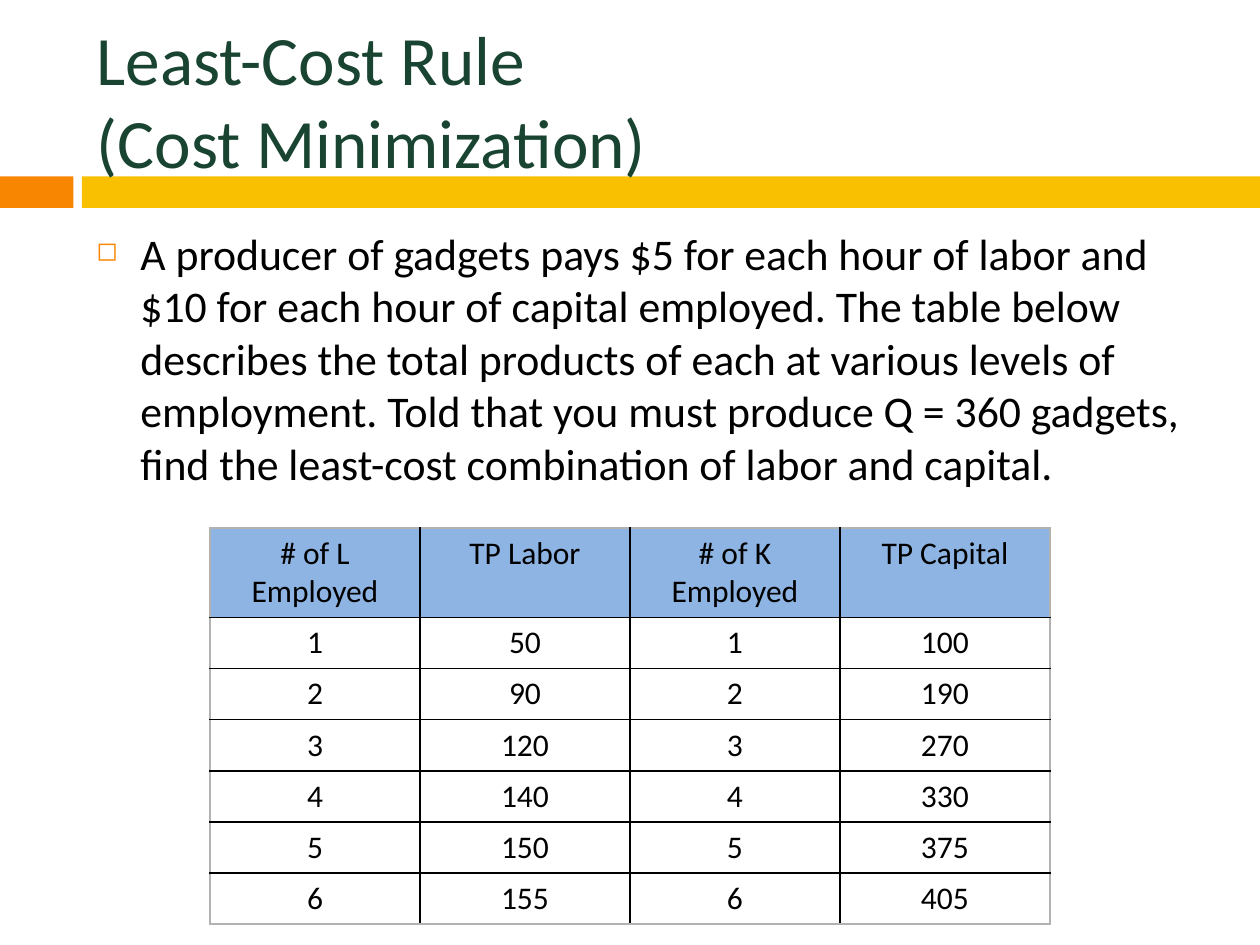
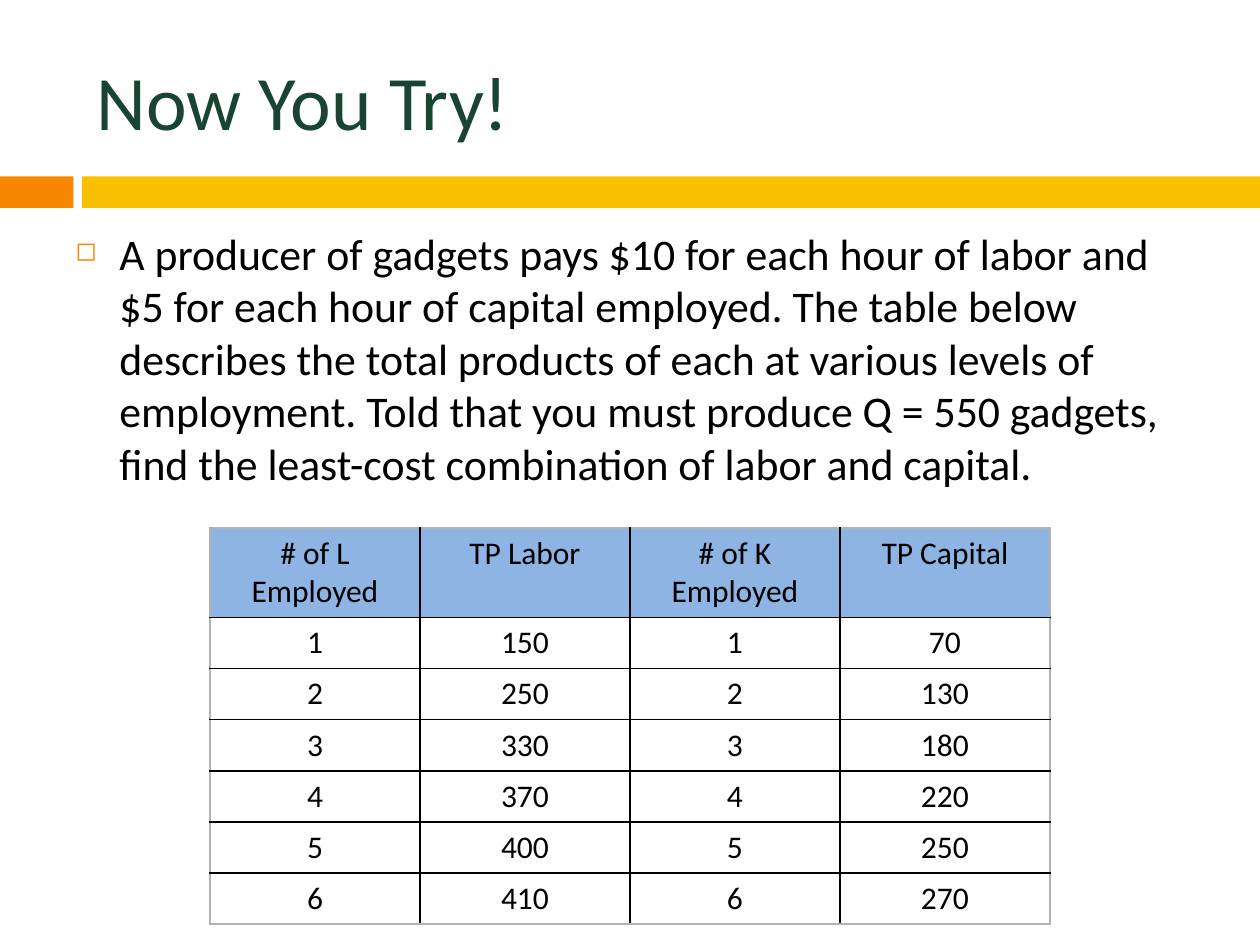
from dataclasses import dataclass
from itertools import product

from lxml import etree
from pptx import Presentation
from pptx.dml.color import RGBColor
from pptx.enum.shapes import MSO_SHAPE
from pptx.enum.text import MSO_ANCHOR, MSO_AUTO_SIZE, PP_ALIGN
from pptx.oxml.ns import qn
from pptx.slide import Slide
from pptx.util import Inches, Pt

RECT = MSO_SHAPE.RECTANGLE
MIDDLE, TOP = MSO_ANCHOR.MIDDLE, MSO_ANCHOR.TOP
NO_FIT = MSO_AUTO_SIZE.NONE
LEFT, CENTER = PP_ALIGN.LEFT, PP_ALIGN.CENTER

WIDTH, HEIGHT = Inches(10), Inches(7.5)
COL, ROW = WIDTH / 12, HEIGHT / 30
TITLE_ONLY = 5
FONT = "Calibri"
GREEN, ORANGE, YELLOW = "194431", "F88600", "F8C000"
BLUE, BLACK, GRAY = "8EB4E3", "000000", "B2B2B2"
HEADERS = ("# of L Employed", "TP Labor", "# of K Employed", "TP Capital")


@dataclass(frozen=True)
class Box:
    col: float
    row: float
    cols: float
    rows: float

    def emu(self) -> tuple[int, int, int, int]:
        return (round(self.col * COL), round(self.row * ROW),
                round(self.cols * COL), round(self.rows * ROW))


@dataclass(frozen=True)
class Band:
    box: Box
    color: str


@dataclass(frozen=True)
class Exercise:
    title: tuple[str, ...]
    title_size: float
    body_box: Box
    labor_cost: int
    capital_cost: int
    quantity: int
    tp_labor: tuple[int, ...]
    tp_capital: tuple[int, ...]

    def question(self) -> str:
        return (f"A producer of gadgets pays ${self.labor_cost} for each hour of labor "
                f"and ${self.capital_cost} for each hour of capital employed. "
                "The table below describes the total products of each at various levels "
                f"of employment. Told that you must produce Q = {self.quantity} gadgets, "
                "find the least-cost combination of labor and capital.")

    def rows(self) -> list[tuple]:
        pairs = zip(self.tp_labor, self.tp_capital)
        return [HEADERS] + [(n, tl, n, tk) for n, (tl, tk) in enumerate(pairs, 1)]


TITLE_BOX = Box(0.8, 1, 10.7, 4.32)
TABLE_BOX = Box(2, 16.76, 8, 12.52)
HEADER_ROWS = 2.84
BANDS = (Band(Box(0, 5.6, 0.7, 1), ORANGE), Band(Box(0.78, 5.6, 11.22, 1), YELLOW))

EXERCISES = (
    Exercise(("Least-Cost Rule", "(Cost Minimization)"), 39.6, Box(0.8, 7, 10.7, 19.68),
             5, 10, 360, (50, 90, 120, 140, 150, 155), (100, 190, 270, 330, 375, 405)),
    Exercise(("Now You Try!",), 44, Box(0.6, 7, 10.8, 19.8),
             10, 5, 550, (150, 250, 330, 370, 400, 410), (70, 130, 180, 220, 250, 270)),
)


def rgb(value: str) -> RGBColor:
    return RGBColor.from_string(value)


def set_attrs(target, values: dict) -> None:
    for name, value in values.items():
        setattr(target, name, value)


def place(shape, box: Box) -> None:
    set_attrs(shape, dict(zip(("left", "top", "width", "height"), box.emu())))


def write(p, lines: tuple[str, ...], size: float, color: str, align) -> None:
    p.alignment = align
    for i, line in enumerate(lines):
        if i:
            p.add_line_break()
        r = p.add_run()
        r.text = line
        set_attrs(r.font, {"name": FONT, "size": Pt(size), "bold": False})
        r.font.color.rgb = rgb(color)


def add_title(s: Slide, ex: Exercise) -> None:
    title = s.shapes.title
    place(title, TITLE_BOX)
    tf = title.text_frame
    set_attrs(tf, {"word_wrap": True, "auto_size": NO_FIT, "vertical_anchor": MIDDLE})
    write(tf.paragraphs[0], ex.title, ex.title_size, GREEN, LEFT)


def add_bands(s: Slide) -> None:
    for band in BANDS:
        sp = s.shapes.add_shape(RECT, *band.box.emu())
        sp.shadow.inherit = False
        sp.fill.solid()
        sp.fill.fore_color.rgb = rgb(band.color)
        sp.line.fill.background()
        s.shapes.title.element.addprevious(sp.element)


def add_bullet(p) -> None:
    pPr = p._p.get_or_add_pPr()
    indent = Inches(0.35)
    pPr.set("marL", str(indent))
    pPr.set("indent", str(-indent))
    color = etree.SubElement(pPr, qn("a:buClr"))
    etree.SubElement(color, qn("a:srgbClr"), val=ORANGE)
    etree.SubElement(pPr, qn("a:buSzPct"), val="60000")
    etree.SubElement(pPr, qn("a:buChar"), char="◻")


def add_question(s: Slide, ex: Exercise) -> None:
    tf = s.shapes.add_textbox(*ex.body_box.emu()).text_frame
    set_attrs(tf, {"word_wrap": True, "auto_size": NO_FIT, "vertical_anchor": TOP})
    p = tf.paragraphs[0]
    write(p, (ex.question(),), 25, BLACK, LEFT)
    p.space_before = Pt(7)
    add_bullet(p)


def add_borders(cell, outer: dict[str, bool]) -> None:
    tcPr = cell._tc.get_or_add_tcPr()
    for side, is_outer in outer.items():
        ln = etree.SubElement(tcPr, qn(f"a:ln{side}"), w=str(Pt(1)))
        fill = etree.SubElement(ln, qn("a:solidFill"))
        etree.SubElement(fill, qn("a:srgbClr"), val=GRAY if is_outer else BLACK)


def add_products(s: Slide, ex: Exercise) -> None:
    rows = ex.rows()
    n_rows, n_cols = len(rows), len(HEADERS)
    table = s.shapes.add_table(n_rows, n_cols, *TABLE_BOX.emu()).table
    set_attrs(table, {"first_row": False, "horz_banding": False})
    body_rows = (TABLE_BOX.rows - HEADER_ROWS) / (n_rows - 1)
    for i, row in enumerate(table.rows):
        row.height = round((body_rows if i else HEADER_ROWS) * ROW)
    for i, j in product(range(n_rows), range(n_cols)):
        cell = table.cell(i, j)
        write(cell.text_frame.paragraphs[0], (str(rows[i][j]),), 18, BLACK, CENTER)
        add_borders(cell, {"L": j == 0, "R": j == n_cols - 1,
                           "T": i == 0, "B": i == n_rows - 1})
        if i:
            cell.fill.background()
        else:
            cell.fill.solid()
            cell.fill.fore_color.rgb = rgb(BLUE)


def main() -> None:
    prs = Presentation()
    set_attrs(prs, {"slide_width": WIDTH, "slide_height": HEIGHT})
    for ex in EXERCISES:
        s = prs.slides.add_slide(prs.slide_layouts[TITLE_ONLY])
        add_bands(s)
        add_title(s, ex)
        add_question(s, ex)
        add_products(s, ex)
    prs.save("out.pptx")


if __name__ == "__main__":
    main()
